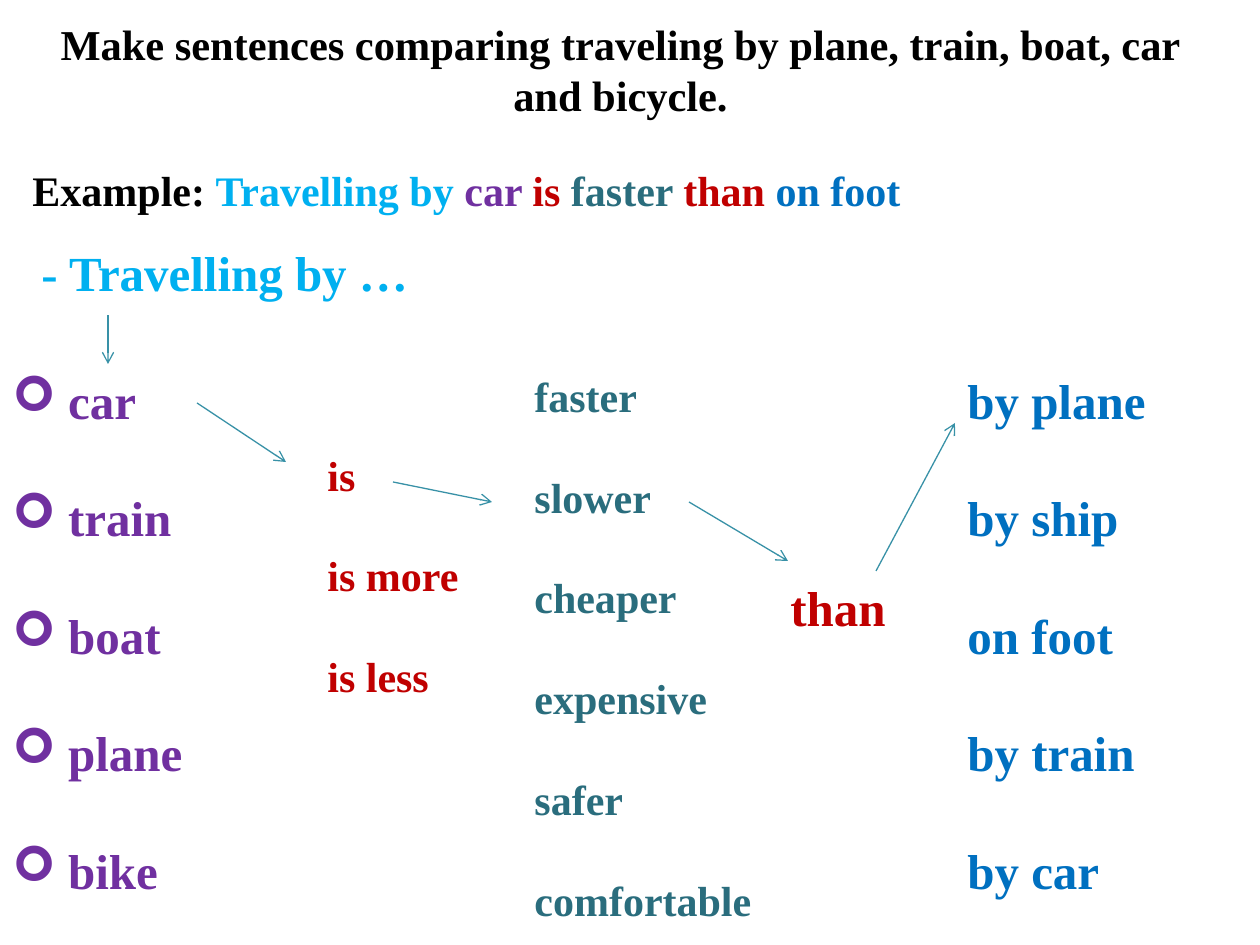
from lxml import etree
from pptx import Presentation
from pptx.dml.color import RGBColor
from pptx.enum.shapes import MSO_CONNECTOR
from pptx.enum.text import MSO_ANCHOR, PP_ALIGN
from pptx.oxml.ns import qn
from pptx.util import Emu, Pt

STRAIGHT = MSO_CONNECTOR.STRAIGHT
BOTTOM = MSO_ANCHOR.BOTTOM
CENTER = PP_ALIGN.CENTER
PX_PER_INCH = 126


class Theme:
    font = "Times New Roman"
    black, sky, purple = "000000", "00B0F0", "7030A0"
    red, teal, blue, arrow = "C00000", "2A6D7D", "0070C0", "3891A7"
    title, body, large = 24.3, 24, 28
    line_height = 1.2
    arrow_width = 0.75


def px(length):
    return Emu(round(length * 914400 / PX_PER_INCH))


def add_text_box(page, box, wrap=False):
    frame = page.shapes.add_textbox(*map(px, box)).text_frame
    frame.word_wrap = wrap
    return frame


def add_spans(para, spans, size):
    para.line_spacing = Pt(size * Theme.line_height)
    for text, color in spans:
        span = para.add_run()
        span.text = text
        span.font.name = Theme.font
        span.font.size = Pt(size)
        span.font.bold = True
        span.font.color.rgb = RGBColor.from_string(color)


def add_bullet(para, mark, indent):
    properties = para._p.get_or_add_pPr()
    properties.set("marL", str(px(indent)))
    properties.set("indent", str(-px(indent)))
    etree.SubElement(properties, qn("a:buFont"), typeface="Wingdings")
    etree.SubElement(properties, qn("a:buChar"), char=mark)


def add_title(page, box, text):
    frame = add_text_box(page, box, wrap=True)
    frame.vertical_anchor = BOTTOM
    frame.margin_bottom = px(67)
    para = frame.paragraphs[0]
    para.alignment = CENTER
    add_spans(para, [(text, Theme.black)], Theme.title)


def add_sentence(page, box, spans, size):
    add_spans(add_text_box(page, box).paragraphs[0], spans, size)


def add_word_column(page, box, words, color, size, bullet=None):
    """Stack words with one line of space between them."""
    frame = add_text_box(page, box, wrap=bullet is not None)
    for index, word in enumerate(words):
        para = frame.add_paragraph() if index else frame.paragraphs[0]
        if index:
            para.space_before = Pt(size * Theme.line_height)
        add_spans(para, [(word, color)], size)
        if bullet:
            add_bullet(para, bullet, indent=40)


def add_arrow(page, start, end):
    arrow = page.shapes.add_connector(STRAIGHT, *map(px, start + end))
    arrow.line.color.rgb = RGBColor.from_string(Theme.arrow)
    arrow.line.width = Pt(Theme.arrow_width)
    etree.SubElement(arrow.line._get_or_add_ln(), qn("a:tailEnd"), type="arrow")
    etree.SubElement(arrow._element.spPr, qn("a:effectLst"))


def build_page(page):
    # Task and example
    add_title(page, (20, 69, 1201, 118),
              "Make sentences comparing traveling by plane, train, boat, car and bicycle.")
    add_sentence(page, (20, 158, 901, 63), [
        ("Example: ", Theme.black), ("Travelling by ", Theme.sky),
        ("car ", Theme.purple), ("is ", Theme.red), ("faster ", Theme.teal),
        ("than ", Theme.red), ("on foot", Theme.blue)], Theme.body)

    # Sentence builder
    add_sentence(page, (29, 236, 396, 72), [("- Travelling by …", Theme.sky)], Theme.large)
    add_word_column(page, (0, 364, 246, 547),
                    [" car", " train", " boat", " plane", " bike"],
                    Theme.purple, Theme.large, bullet="➢")
    add_word_column(page, (315, 443, 157, 267), ["is", "is more", "is less"],
                    Theme.red, Theme.body)
    add_word_column(page, (522, 364, 244, 611),
                    ["faster", "slower", "cheaper", "expensive", "safer", "comfortable"],
                    Theme.teal, Theme.body)
    add_sentence(page, (778, 571, 135, 72), [("than", Theme.red)], Theme.large)
    add_word_column(page, (955, 364, 213, 624),
                    ["by plane", "by ship", "on foot", "by train", "by car"],
                    Theme.blue, Theme.large)

    # Arrows in reading order
    for start, end in [
        ((108, 315), (108, 364)),
        ((197, 403), (286, 462)),
        ((393, 482), (492, 502)),
        ((689, 502), (788, 561)),
        ((876, 571), (955, 423)),
    ]:
        add_arrow(page, start, end)


def main():
    deck = Presentation()
    deck.slide_width, deck.slide_height = px(1260), px(945)
    build_page(deck.slides.add_slide(deck.slide_layouts[6]))
    deck.save("out.pptx")


if __name__ == "__main__":
    main()
